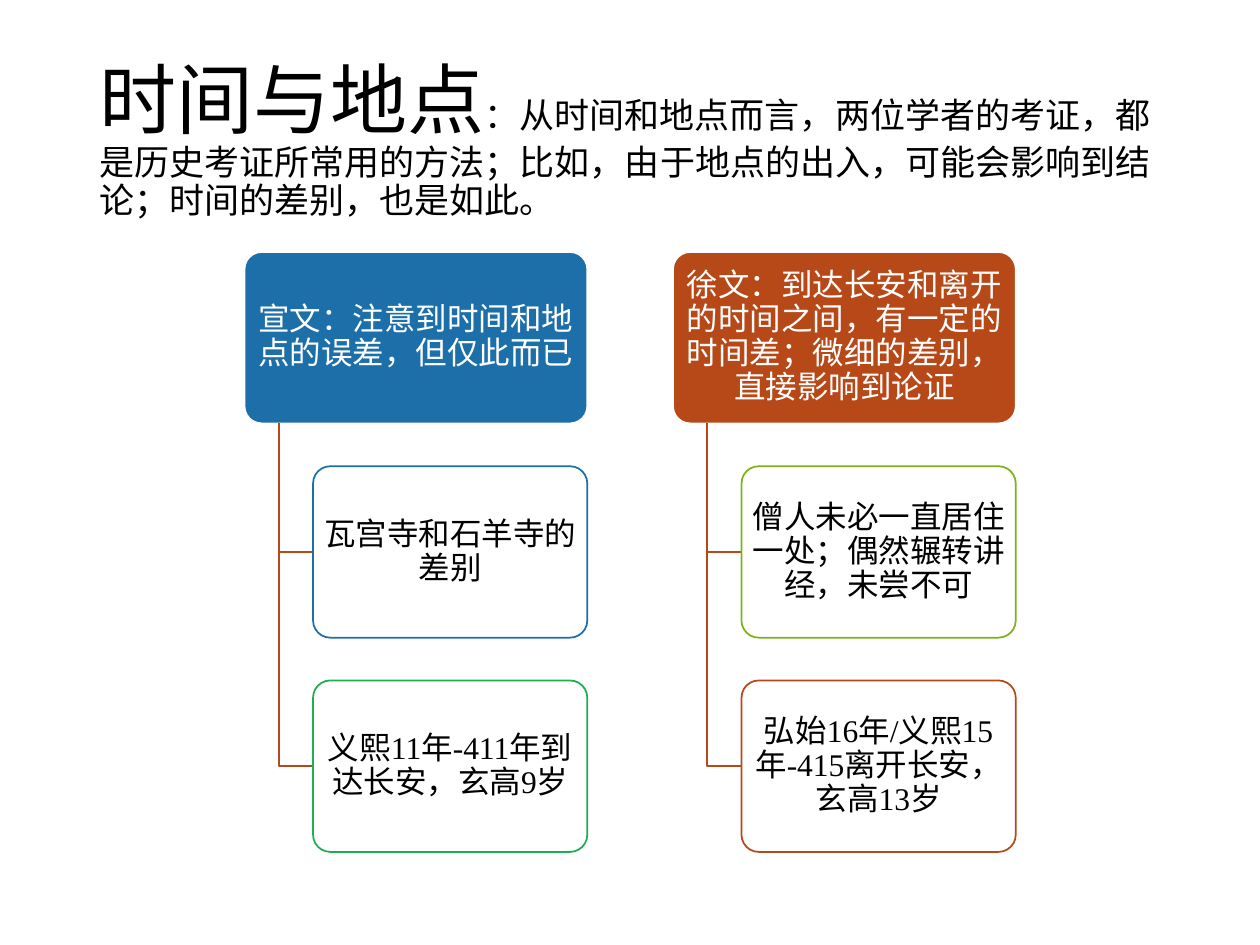
from lxml import etree
from pptx import Presentation
from pptx.dml.color import RGBColor
from pptx.enum.shapes import MSO_SHAPE
from pptx.enum.text import MSO_ANCHOR, PP_ALIGN
from pptx.oxml.ns import qn
from pptx.util import Cm, Pt

ROUNDED = MSO_SHAPE.ROUNDED_RECTANGLE
MIDDLE = MSO_ANCHOR.MIDDLE
LEFT, CENTER = PP_ALIGN.LEFT, PP_ALIGN.CENTER

THEME = {
    "font": "Times New Roman",
    "black": "000000", "white": "FFFFFF",
    "blue": "1D6FA9", "green": "1CAE53", "lime": "7FB21A", "rust": "B74919",
    "heading": 44, "intro": 20, "card": 18,
    "line": 1, "spacing": 0.9, "detail_opacity": 90,
}

TITLE = [
    ("时间与地点", "heading"),
    ("：从时间和地点而言，两位学者的考证，都是历史考证所常用的方法；"
     "比如，由于地点的出入，可能会影响到结论；时间的差别，也是如此。", "intro"),
]
BRANCHES = [
    {"claim": "宣文：注意到时间和地点的误差，但仅此而已", "color": "blue",
     "details": [("瓦宫寺和石羊寺的差别", "blue"),
                 ("义熙11年-411年到达长安，玄高9岁", "green")]},
    {"claim": "徐文：到达长安和离开的时间之间，有一定的时间差；微细的差别，直接影响到论证",
     "color": "rust",
     "details": [("僧人未必一直居住一处；偶然辗转讲经，未尝不可", "lime"),
                 ("弘始16年/义熙15年-415离开长安，玄高13岁", "rust")]},
]

# Lengths in centimetres; every part of the tree is a share of the claim card
TREE_LEFT, TREE_TOP = 4.93, 5.08
CARD_W = 6.91
CARD_H = CARD_W / 2
COLUMN_STEP, ROW_STEP = CARD_W * 1.25, CARD_H * 1.25
TRUNK_INDENT, DETAIL_INDENT = CARD_W * 0.1, CARD_W * 0.2
DETAIL_W = CARD_W - DETAIL_INDENT
CARD_INSETS = (0.1, 0.08)
TITLE_INSETS = (0.25, 0.13)


def rgb(name):
    return RGBColor.from_string(THEME[name])


def write(frame, runs, color, align, insets):
    side, end = (Cm(inset) for inset in insets)
    frame_format = {"word_wrap": True, "vertical_anchor": MIDDLE,
                    "margin_left": side, "margin_right": side,
                    "margin_top": end, "margin_bottom": end}
    for name, value in frame_format.items():
        setattr(frame, name, value)
    paragraph = frame.paragraphs[0]
    paragraph.alignment = align
    paragraph.line_spacing = THEME["spacing"]
    for text, size in runs:
        run = paragraph.add_run()
        run.text = text
        for name, value in {"name": THEME["font"], "size": Pt(THEME[size])}.items():
            setattr(run.font, name, value)
        run.font.color.rgb = rgb(color)


def outline(shape, color):
    shape.shadow.inherit = False
    shape.line.color.rgb = rgb(color)
    shape.line.width = Pt(THEME["line"])


def add_card(slide, left, top, width, text, fill, line, ink):
    card = slide.shapes.add_shape(ROUNDED, Cm(left), Cm(top), Cm(width), Cm(CARD_H))
    card.adjustments[0] = 0.1
    card.fill.solid()
    card.fill.fore_color.rgb = rgb(fill)
    outline(card, line)
    write(card.text_frame, [(text, "card")], ink, CENTER, CARD_INSETS)
    return card


def fade(card, percent):
    """Set the opacity of a solid fill."""
    fill_color = card.fill._xPr.find(qn("a:solidFill"))[0]
    etree.SubElement(fill_color, qn("a:alpha"), val=str(percent * 1000))


def add_elbow(slide, left, top, right, bottom):
    """Draw a line down, then right, to the middle of a detail card."""
    builder = slide.shapes.build_freeform(Cm(left), Cm(top))
    builder.add_line_segments([(Cm(left), Cm(bottom)), (Cm(right), Cm(bottom))], close=False)
    elbow = builder.convert_to_shape()
    elbow.fill.background()
    outline(elbow, "rust")


def add_branch(slide, left, branch):
    add_card(slide, left, TREE_TOP, CARD_W, branch["claim"], branch["color"], "white", "white")
    detail_left = left + DETAIL_INDENT
    for row, (text, color) in enumerate(branch["details"], start=1):
        top = TREE_TOP + row * ROW_STEP
        add_elbow(slide, left + TRUNK_INDENT, TREE_TOP + CARD_H, detail_left, top + CARD_H / 2)
        detail = add_card(slide, detail_left, top, DETAIL_W, text, "white", color, "black")
        fade(detail, THEME["detail_opacity"])


def main():
    deck = Presentation()
    deck.slide_width, deck.slide_height = Cm(25.4), Cm(19.05)
    slide = deck.slides.add_slide(deck.slide_layouts[6])
    title = slide.shapes.add_textbox(Cm(1.75), Cm(1.01), Cm(21.9), Cm(3.68))
    write(title.text_frame, TITLE, "black", LEFT, TITLE_INSETS)
    for column, branch in enumerate(BRANCHES):
        add_branch(slide, TREE_LEFT + column * COLUMN_STEP, branch)
    deck.save("out.pptx")


if __name__ == "__main__":
    main()
